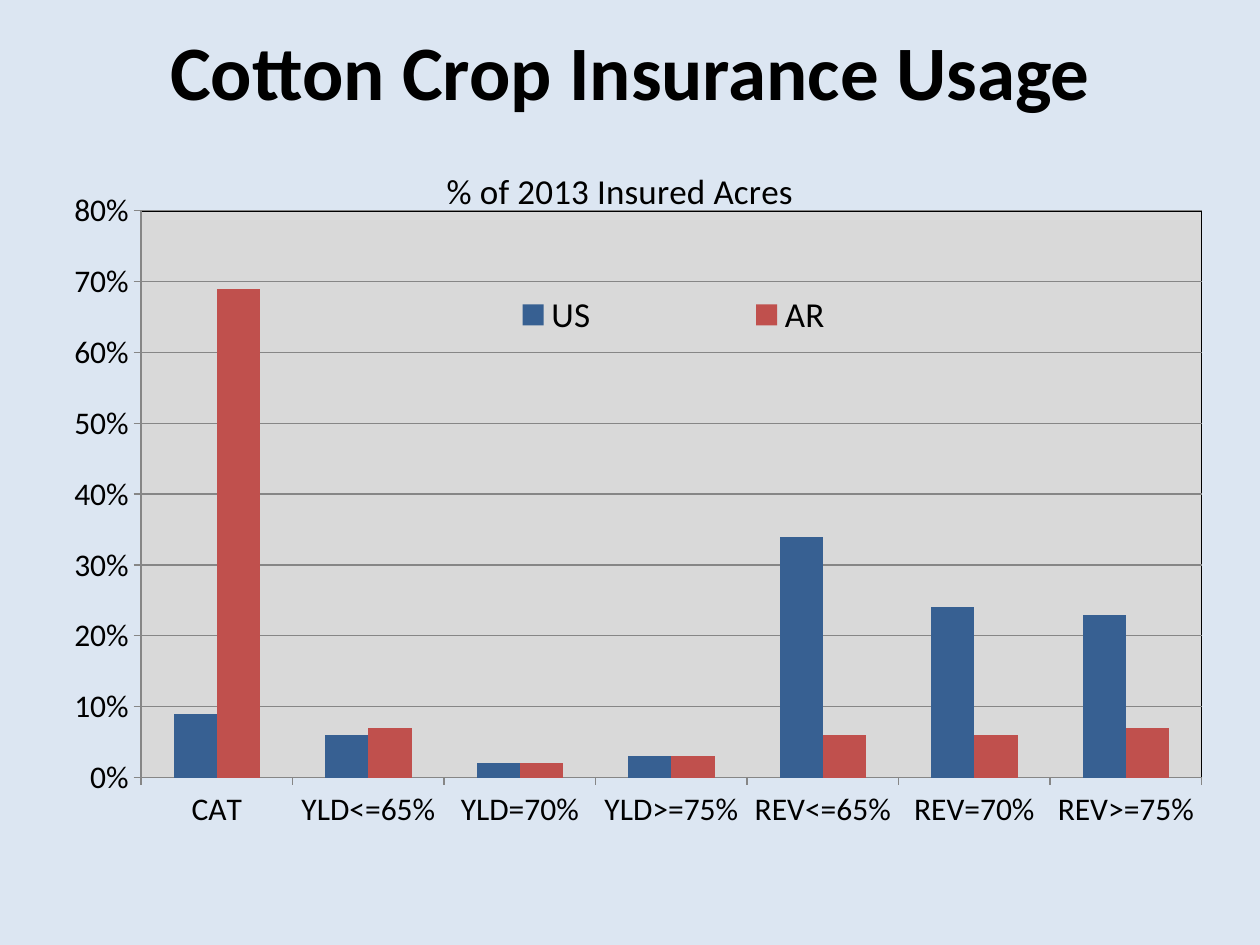
from lxml import etree
from pptx import Presentation
from pptx.chart.data import CategoryChartData
from pptx.dml.color import RGBColor
from pptx.enum.chart import XL_CHART_TYPE, XL_LEGEND_POSITION, XL_TICK_MARK
from pptx.enum.text import MSO_ANCHOR, PP_ALIGN
from pptx.oxml.ns import qn
from pptx.util import Inches, Pt

COLUMN = XL_CHART_TYPE.COLUMN_CLUSTERED
RIGHT = XL_LEGEND_POSITION.RIGHT
OUT, NONE = XL_TICK_MARK.OUTSIDE, XL_TICK_MARK.NONE
MIDDLE, CENTER = MSO_ANCHOR.MIDDLE, PP_ALIGN.CENTER

BLACK = RGBColor(0x00, 0x00, 0x00)
SKY = RGBColor(0xDC, 0xE6, 0xF2)
PALE = RGBColor(0xD9, 0xD9, 0xD9)
GRAY = RGBColor(0x86, 0x86, 0x86)
BLUE = RGBColor(0x37, 0x60, 0x92)
RED = RGBColor(0xC0, 0x50, 0x4D)

GROUPS = ["CAT", "YLD<=65%", "YLD=70%", "YLD>=75%", "REV<=65%", "REV=70%", "REV>=75%"]
SERIES = [
    ("US", [0.09, 0.06, 0.02, 0.03, 0.34, 0.24, 0.23], BLUE),
    ("AR", [0.69, 0.07, 0.02, 0.03, 0.06, 0.06, 0.07], RED),
]


def style(item, values):
    for name, value in values.items():
        setattr(item, name, value)


def paint(font, size, bold=False):
    style(font, {"name": "Calibri", "size": Pt(size), "bold": bold})
    font.color.rgb = BLACK


def rule(line, color):
    line.color.rgb = color
    line.width = Pt(0.75)


def place(node, index, parts):
    for old in node.findall(qn("c:layout")):
        node.remove(old)
    layout = etree.Element(qn("c:layout"))
    manual = etree.SubElement(layout, qn("c:manualLayout"))
    for name, value in parts.items():
        etree.SubElement(manual, qn(f"c:{name}")).set("val", str(value))
    node.insert(index, layout)


def add_title(slide, box):
    frame = slide.shapes.add_textbox(*box).text_frame
    style(frame, {"word_wrap": True, "vertical_anchor": MIDDLE})
    para = frame.paragraphs[0]
    para.text = "Cotton Crop Insurance Usage"
    para.alignment = CENTER
    paint(para.runs[0].font, 44, True)


def set_layout(chart):
    root = chart.element
    title = root.find(".//" + qn("c:title"))
    title.find(qn("c:overlay")).set("val", "1")
    edge = {"xMode": "edge", "yMode": "edge"}
    place(title, 1, {**edge, "x": 0.35, "y": 0.04})
    place(root.find(".//" + qn("c:legend")), 1,
          {**edge, "x": 0.29, "y": 0.2, "w": 0.51, "h": 0.09})
    plot = root.find(".//" + qn("c:plotArea"))
    place(plot, 0, {"layoutTarget": "inner", **edge,
                    "x": 0.1, "y": 0.107, "w": 0.886, "h": 0.75})
    shade = etree.SubElement(plot, qn("c:spPr"))
    for parent, color in ((shade, PALE), (etree.Element(qn("a:ln"), w="12700"), BLACK)):
        fill = etree.SubElement(parent, qn("a:solidFill"))
        etree.SubElement(fill, qn("a:srgbClr")).set("val", str(color))
        if parent is not shade:
            shade.append(parent)


def add_usage(slide, box):
    data = CategoryChartData(number_format="0%")
    data.categories = GROUPS
    for name, values, _ in SERIES:
        data.add_series(name, values)
    chart = slide.shapes.add_chart(COLUMN, *box, data).chart
    paint(chart.font, 18)
    style(chart, {"has_title": True, "has_legend": True})
    frame = chart.chart_title.text_frame
    frame.text = "% of 2013 Insured Acres"
    paint(frame.paragraphs[0].runs[0].font, 20)
    style(chart.legend, {"position": RIGHT, "include_in_layout": True})
    paint(chart.legend.font, 20)

    plot = chart.plots[0]
    style(plot, {"gap_width": 150, "overlap": 0, "vary_by_categories": False})
    for series, (_, _, color) in zip(plot.series, SERIES):
        series.invert_if_negative = False
        series.format.fill.solid()
        series.format.fill.fore_color.rgb = color

    for axis in (chart.category_axis, chart.value_axis):
        style(axis, {"major_tick_mark": OUT, "minor_tick_mark": NONE})
        paint(axis.tick_labels.font, 18)
        rule(axis.format.line, GRAY)
    scale = chart.value_axis
    style(scale, {"minimum_scale": 0, "maximum_scale": 0.8,
                  "major_unit": 0.1, "has_major_gridlines": True})
    style(scale.tick_labels, {"number_format": "0%", "number_format_is_linked": False})
    rule(scale.major_gridlines.format.line, GRAY)
    set_layout(chart)


def main():
    deck = Presentation()
    style(deck, {"slide_width": Inches(10), "slide_height": Inches(7.5)})
    slide = deck.slides.add_slide(deck.slide_layouts[6])
    slide.background.fill.solid()
    slide.background.fill.fore_color.rgb = SKY
    add_title(slide, [Inches(n) for n in (0.17, 0.08, 9.67, 0.95)])
    add_usage(slide, [Inches(n) for n in (0.17, 1.03, 9.5, 6)])
    deck.save("out.pptx")


if __name__ == "__main__":
    main()
